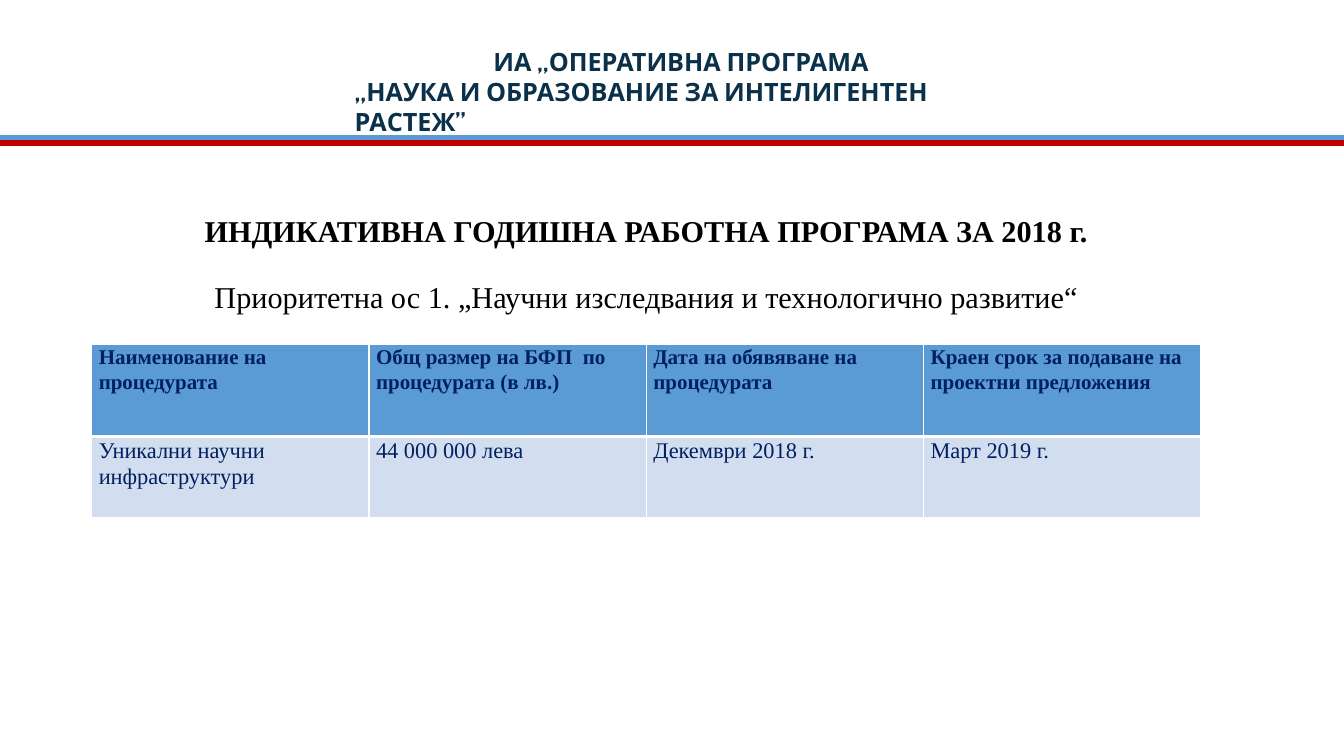
"""Build the 2018 indicative work programme slide."""
from lxml import etree
from pptx import Presentation
from pptx import util as u
from pptx.dml.color import RGBColor
from pptx.enum import shapes, text
from pptx.oxml import ns


def colour(value):
    return RGBColor.from_string(value)


def write(para, words, font="Times New Roman", size=16, ink="002060", bold=False,
          align=text.PP_ALIGN.LEFT, spacing=1.0, before=0):
    para.alignment = align
    para.line_spacing = spacing
    para.space_before = u.Pt(before)
    span = para.add_run()
    span.text = words
    span.font.name = font
    span.font.size = u.Pt(size)
    span.font.bold = bold
    span.font.color.rgb = colour(ink)


deck = Presentation()
deck.slide_width, deck.slide_height = u.Inches(13.33), u.Inches(7.5)
page = deck.slides.add_slide(deck.slide_layouts[5])

for top, ink in ((1.37, "5B9BD5"), (1.42, "C00000")):
    stripe = page.shapes.add_connector(
        shapes.MSO_CONNECTOR.STRAIGHT, 0, u.Inches(top), deck.slide_width, u.Inches(top))
    stripe.line.color.rgb = colour(ink)
    stripe.line.width = u.Pt(3.75)
    etree.SubElement(stripe._element.spPr, ns.qn("a:effectLst"))

agency = page.shapes.add_textbox(
    u.Inches(3.42), u.Inches(0.41), u.Inches(6.67), u.Inches(0.71)).text_frame
agency.word_wrap = True
agency_style = {"font": "Cabin", "size": 18, "ink": "0A304A", "bold": True}
write(agency.paragraphs[0], "ИА „ОПЕРАТИВНА ПРОГРАМА",
      align=text.PP_ALIGN.CENTER, **agency_style)
write(agency.add_paragraph(), "„НАУКА И ОБРАЗОВАНИЕ ЗА ИНТЕЛИГЕНТЕН РАСТЕЖ”", **agency_style)

title = page.shapes.title
title.left, title.top = u.Inches(0.91), u.Inches(2.1)
title.width, title.height = u.Inches(11), u.Inches(1.07)
heading = title.text_frame
heading.word_wrap = True
heading.auto_size = text.MSO_AUTO_SIZE.NONE
heading.vertical_anchor = text.MSO_ANCHOR.MIDDLE
heading_style = {"size": 21.6, "ink": "000000", "align": text.PP_ALIGN.CENTER, "spacing": 0.9}
write(heading.paragraphs[0], "ИНДИКАТИВНА ГОДИШНА РАБОТНА ПРОГРАМА ЗА 2018 г.",
      bold=True, **heading_style)
write(heading.add_paragraph(), "Приоритетна ос 1. „Научни изследвания и технологично развитие“",
      before=24, **heading_style)

procedures = (
    ("Наименование на процедурата", "Общ размер на БФП  по процедурата (в лв.)",
     "Дата на обявяване на процедурата", "Краен срок за подаване на проектни предложения"),
    ("Уникални научни инфраструктури", "44 000 000 лева", "Декември 2018 г.", "Март 2019 г."),
)
row_styles = (
    {"height": 0.91, "fill": "5B9BD5", "size": 15, "bold": True,
     "borders": {"lnL": 1, "lnR": 1, "lnT": 1, "lnB": 3}},
    {"height": 0.8, "fill": "D2DEEF", "size": 16, "bold": False,
     "borders": {"lnL": 1, "lnR": 1, "lnT": 3, "lnB": 1}},
)
table = page.shapes.add_table(
    2, 4, u.Inches(0.91), u.Inches(3.42), u.Inches(11), u.Inches(1.71)).table
for row, words_in_row, style in zip(table.rows, procedures, row_styles):
    row.height = u.Inches(style["height"])
    for cell, words in zip(row.cells, words_in_row):
        cell.margin_left = cell.margin_right = u.Inches(0.07)
        cell.margin_top = cell.margin_bottom = 0
        properties = cell._tc.get_or_add_tcPr()
        for side, width in style["borders"].items():
            border = etree.SubElement(properties, ns.qn(f"a:{side}"), w=str(u.Pt(width)))
            solid = etree.SubElement(border, ns.qn("a:solidFill"))
            etree.SubElement(solid, ns.qn("a:srgbClr"), val="FFFFFF")
        cell.fill.solid()
        cell.fill.fore_color.rgb = colour(style["fill"])
        write(cell.text_frame.paragraphs[0], words, size=style["size"],
              bold=style["bold"], spacing=1.07)

deck.save("out.pptx")
